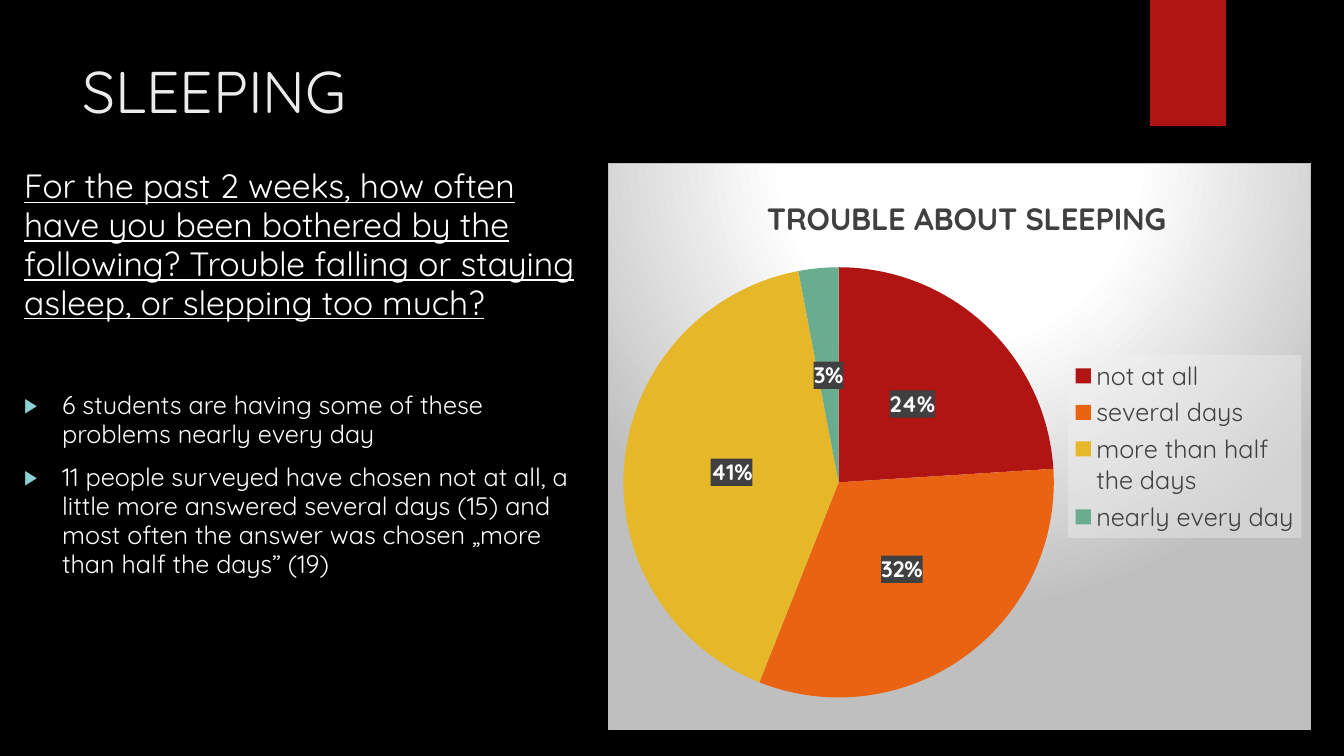
from lxml.etree import fromstring
from pptx import Presentation
from pptx.chart.data import CategoryChartData
from pptx.dml.color import RGBColor
from pptx.enum.chart import XL_CHART_TYPE, XL_LABEL_POSITION, XL_LEGEND_POSITION
from pptx.enum.shapes import MSO_SHAPE
from pptx.enum.text import MSO_ANCHOR, MSO_AUTO_SIZE, PP_ALIGN
from pptx.oxml.ns import qn
from pptx.util import Emu, Pt

FONT = "Quicksand"
BLACK = RGBColor(0x00, 0x00, 0x00)
WHITE = RGBColor(0xFF, 0xFF, 0xFF)
PALE = RGBColor(0xEB, 0xEB, 0xEB)
DARK = RGBColor(0x40, 0x40, 0x40)
LIGHT = RGBColor(0xF2, 0xF2, 0xF2)
SILVER = RGBColor(0xBF, 0xBF, 0xBF)
AQUA = RGBColor(0x8A, 0xD0, 0xD6)
RED = RGBColor(0xB0, 0x15, 0x13)
ORANGE = RGBColor(0xEA, 0x63, 0x12)
YELLOW = RGBColor(0xE6, 0xB7, 0x29)
GREEN = RGBColor(0x6A, 0xAC, 0x90)

NAMESPACES = ('xmlns:a="http://schemas.openxmlformats.org/drawingml/2006/main" '
              'xmlns:c="http://schemas.openxmlformats.org/drawingml/2006/chart"')

QUESTION = ("For the past 2 weeks, how often have you been bothered by the following? "
            "Trouble falling or staying asleep, or slepping too much?")
FINDINGS = [
    "6 students are having some of these problems nearly every day",
    "11 people surveyed have chosen not at all, a little more answered several days (15) "
    "and most often the answer was chosen „more than half the days” (19)",
]
ANSWERS = [
    ("not at all", 24, RED),
    ("several days", 32, ORANGE),
    ("more than half the days", 41, YELLOW),
    ("nearly every day", 3, GREEN),
]


def px(length):
    return Emu(round(length * 12192000 / 1344))


def xml(tag, inner, attributes=""):
    return fromstring(f"<{tag} {NAMESPACES} {attributes}>{inner}</{tag}>")


def style_font(font, size, color, bold=False, underline=False):
    font.name = FONT
    font.size = Pt(size)
    font.bold = bold
    font.underline = underline
    font.color.rgb = color


def write(paragraph, text, **style):
    run = paragraph.add_run()
    run.text = text
    style_font(run.font, **style)


def set_bullet(paragraph, indent=0, bullet=None):
    properties = paragraph._p.get_or_add_pPr()
    properties.set("marL", str(px(indent)))
    properties.set("indent", str(-px(indent)))
    if bullet is None:
        properties.append(xml("a:buNone", ""))
        return
    properties.append(xml("a:buClr", f'<a:srgbClr val="{AQUA}"/>'))
    properties.append(xml("a:buSzPct", "", 'val="80000"'))
    properties.append(xml("a:buFont", "", 'typeface="Arial"'))
    properties.append(xml("a:buChar", "", f'char="{bullet}"'))


def place(shape, left, top, width, height):
    shape.left, shape.top = px(left), px(top)
    shape.width, shape.height = px(width), px(height)


def open_frame(placeholder):
    frame = placeholder.text_frame
    frame.word_wrap = True
    frame.auto_size = MSO_AUTO_SIZE.NONE
    frame.vertical_anchor = MSO_ANCHOR.TOP
    return frame


def add_heading(slide, left, top, width, height):
    heading = slide.shapes.title
    place(heading, left, top, width, height)
    paragraph = open_frame(heading).paragraphs[0]
    paragraph.alignment = PP_ALIGN.LEFT
    write(paragraph, "SLEEPING", size=42, color=PALE)


def add_findings(slide, left, top, width, height):
    body = slide.placeholders[1]
    place(body, left, top, width, height)
    frame = open_frame(body)
    question = frame.paragraphs[0]
    set_bullet(question)
    question.space_before = Pt(0)
    question.line_spacing = 0.96
    write(question, QUESTION, size=24, color=WHITE, underline=True)
    for index, text in enumerate(FINDINGS):
        finding = frame.add_paragraph()
        set_bullet(finding, indent=38, bullet="▶")
        finding.space_before = Pt(10 if index else 49)
        finding.line_spacing = 0.96
        write(finding, text, size=18, color=WHITE)


def add_ribbon(slide, left, top, width, height):
    ribbon = slide.shapes.add_shape(MSO_SHAPE.RECTANGLE, 0, 0, 0, 0)
    place(ribbon, left, top, width, height)
    ribbon.shadow.inherit = False
    ribbon.fill.solid()
    ribbon.fill.fore_color.rgb = RED
    ribbon.line.fill.background()


def set_layout(element, index, frame, box, target=""):
    """Place a chart part by a box in px relative to the chart frame."""
    for old in element.findall(qn("c:layout")):
        element.remove(old)
    left, top, width, height = box
    fractions = {"x": left / frame[0], "y": top / frame[1],
                 "w": width / frame[0], "h": height / frame[1]}
    modes = "".join(f'<c:{key}Mode val="edge"/>' for key in "xy")
    values = "".join(f'<c:{key} val="{value:.4f}"/>' for key, value in fractions.items())
    manual = f"<c:manualLayout>{target}{modes}{values}</c:manualLayout>"
    element.insert(index, xml("c:layout", manual))


def solid_box(color, opacity):
    return xml("c:spPr", f'<a:solidFill><a:srgbClr val="{color}">'
                         f'<a:alpha val="{opacity * 1000}"/></a:srgbClr></a:solidFill>')


def backdrop():
    stops = "".join(f'<a:gs pos="{position * 1000}"><a:srgbClr val="{color}"/></a:gs>'
                    for position, color in [(0, WHITE), (39, WHITE), (100, SILVER)])
    return xml("c:spPr", f'<a:gradFill><a:gsLst>{stops}</a:gsLst><a:path path="circle">'
                         '<a:fillToRect l="50000" t="-80000" r="50000" b="180000"/></a:path></a:gradFill>'
                         f'<a:ln w="9525"><a:solidFill><a:srgbClr val="{SILVER}"/></a:solidFill></a:ln>')


def add_answer_chart(slide, left, top, width, height):
    answers = CategoryChartData()
    answers.categories = [name for name, _, _ in ANSWERS]
    answers.add_series("TROUBLE ABOUT SLEEPING", [share for _, share, _ in ANSWERS])
    chart = slide.shapes.add_chart(XL_CHART_TYPE.PIE, px(left), px(top),
                                   px(width), px(height), answers).chart
    frame = (width, height)
    style_font(chart.font, size=10, color=WHITE)
    chart._chartSpace.find(qn("c:chart")).addnext(backdrop())

    # Title
    chart.has_title = True
    write(chart.chart_title.text_frame.paragraphs[0], "TROUBLE ABOUT SLEEPING",
          size=22, color=DARK, bold=True)
    set_layout(chart.chart_title._element, 1, frame, (153, 27, 400, 38))

    # Slices and their percentages
    pie = chart.plots[0]
    pie.vary_by_categories = True
    for index, (_, _, color) in enumerate(ANSWERS):
        slice_fill = pie.series[0].points[index].format.fill
        slice_fill.solid()
        slice_fill.fore_color.rgb = color
    labels = pie.series[0].data_labels
    labels.show_percentage = True
    labels.show_value = False
    labels.number_format = "0%"
    labels.number_format_is_linked = False
    labels.position = XL_LABEL_POSITION.CENTER
    style_font(labels.font, size=16, color=WHITE, bold=True)
    labels._element.find(qn("c:txPr")).addprevious(solid_box(DARK, 90))
    set_layout(chart._chartSpace.find(".//" + qn("c:plotArea")), 0, frame,
               (15, 104, 431, 431), '<c:layoutTarget val="inner"/>')

    # Legend
    chart.has_legend = True
    legend = chart.legend
    legend.position = XL_LEGEND_POSITION.RIGHT
    legend.include_in_layout = False
    style_font(legend.font, size=18, color=DARK)
    legend._element.find(qn("c:txPr")).addprevious(solid_box(LIGHT, 39))
    set_layout(legend._element, 1, frame, (460, 192, 234, 183))


def main():
    deck = Presentation()
    deck.slide_width, deck.slide_height = px(1344), px(756)
    slide = deck.slides.add_slide(deck.slide_layouts[1])
    slide.background.fill.solid()
    slide.background.fill.fore_color.rgb = BLACK
    add_ribbon(slide, 1150, 0, 76, 126)
    add_heading(slide, 72, 50, 1037, 154)
    add_findings(slide, 14, 163, 574, 567)
    add_answer_chart(slide, 608, 163, 703, 567)
    deck.save("out.pptx")


if __name__ == "__main__":
    main()
